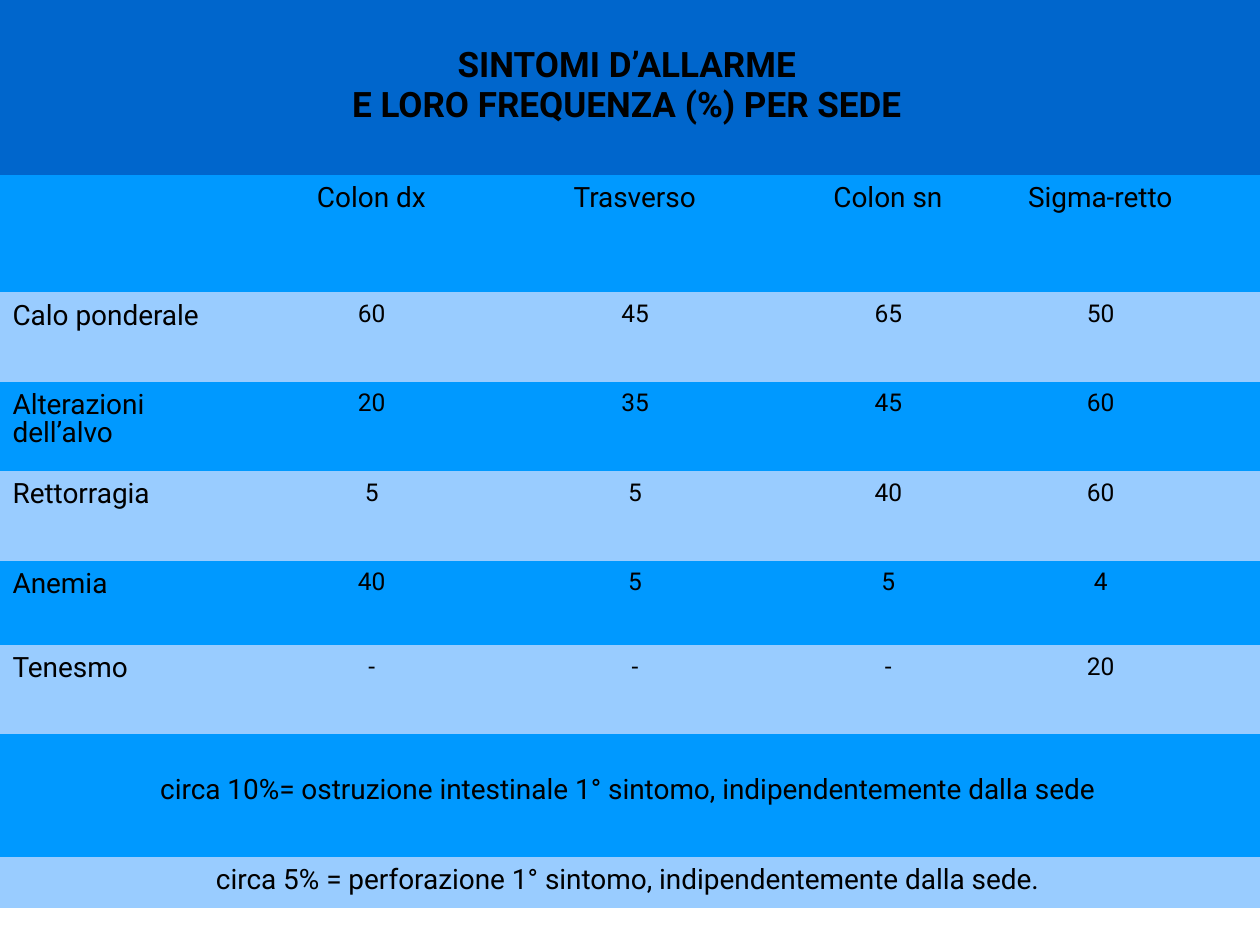
from dataclasses import dataclass

from pptx import Presentation
from pptx import util as u
from pptx.dml.color import RGBColor
from pptx.enum import text
from pptx.oxml.ns import qn
from pptx.table import Table, _Cell

COLORS = {"title": "0066CC", "dark": "0099FF", "light": "99CCFF", "text": "000000"}
FONT_NAME = "Roboto"
NO_STYLE_NO_GRID = "{2D5ABB26-0587-4C30-8999-92F81FD0307C}"
COLUMN_WIDTHS = [2.01, 1.93, 2.25, 1.77, 1.6, 0.46]
CENTER, LEFT = text.PP_ALIGN.CENTER, text.PP_ALIGN.LEFT


@dataclass(frozen=True)
class Row:
    height: float
    fill: str
    cells: tuple[str, ...]
    size: int = 16
    bold: bool = False
    merged: bool = False
    top: float = 0.08


ROWS = [
    Row(1.39, "title", ("SINTOMI D’ALLARME \nE LORO FREQUENZA (%) PER SEDE ",),
        size=20, bold=True, merged=True, top=0.39),
    Row(0.93, "dark", ("", "Colon dx ", "Trasverso ", "Colon sn ", "Sigma-retto ")),
    Row(0.71, "light", ("Calo ponderale", "60 ", "45 ", "65 ", "50 "), size=14),
    Row(0.71, "dark", ("Alterazioni dell’alvo", "20 ", "35 ", "45 ", "60 "), size=14),
    Row(0.71, "light", ("Rettorragia", "5 ", "5 ", "40 ", "60 "), size=14),
    Row(0.67, "dark", ("Anemia", "40 ", "5 ", "5 ", "4 "), size=14),
    Row(0.71, "light", ("Tenesmo", "- ", "- ", "- ", "20 "), size=14),
    Row(0.97, "dark",
        ("circa 10%= ostruzione intestinale 1° sintomo, indipendentemente dalla sede ",),
        merged=True, top=0.34),
    Row(0.41, "light",
        ("circa 5% = perforazione 1° sintomo, indipendentemente dalla sede. ",),
        merged=True),
]


def apply_format(target: object, values: dict) -> None:
    for name, value in values.items():
        setattr(target, name, value)


def write_cell(cell: _Cell, content: str, row: Row, is_label: bool) -> None:
    apply_format(cell, {
        "margin_left": u.Inches(0.1), "margin_right": u.Inches(0.1),
        "margin_top": u.Inches(row.top), "margin_bottom": u.Inches(0.05),
    })
    cell.text_frame.text = content
    for paragraph in cell.text_frame.paragraphs:
        apply_format(paragraph, {
            "alignment": LEFT if is_label else CENTER, "line_spacing": 0.87,
            "space_before": u.Pt(1.1), "space_after": u.Pt(1.1),
        })
        apply_format(paragraph.font, {
            "name": FONT_NAME, "size": u.Pt(16 if is_label else row.size),
            "bold": row.bold,
        })
        for run in paragraph.runs:
            apply_format(run.font, {
                "name": FONT_NAME, "size": paragraph.font.size, "bold": row.bold,
            })
            run.font.color.rgb = RGBColor.from_string(COLORS["text"])


def fill_row(table: Table, index: int, row: Row) -> None:
    table.rows[index].height = u.Inches(row.height)
    last_column = len(COLUMN_WIDTHS) - 1
    for column in range(last_column + 1):
        cell = table.cell(index, column)
        cell.fill.solid()
        cell.fill.fore_color.rgb = RGBColor.from_string(COLORS[row.fill])
    if row.merged:
        table.cell(index, 0).merge(table.cell(index, last_column))
    for column, content in enumerate(row.cells):
        if content:
            write_cell(table.cell(index, column), content, row,
                       is_label=column == 0 and not row.merged)


def main() -> None:
    presentation = Presentation()
    apply_format(presentation, {"slide_width": u.Inches(10), "slide_height": u.Inches(7.5)})
    slide = presentation.slides.add_slide(presentation.slide_layouts[6])
    frame = slide.shapes.add_table(
        len(ROWS), len(COLUMN_WIDTHS), 0, 0,
        u.Inches(sum(COLUMN_WIDTHS)), u.Inches(sum(row.height for row in ROWS)),
    )
    table = frame.table
    apply_format(table, {"first_row": False, "horz_banding": False})
    for style in frame.element.iter(qn("a:tableStyleId")):
        style.text = NO_STYLE_NO_GRID
    for column, width in zip(table.columns, COLUMN_WIDTHS):
        column.width = u.Inches(width)
    for index, row in enumerate(ROWS):
        fill_row(table, index, row)
    presentation.save("out.pptx")


if __name__ == "__main__":
    main()
